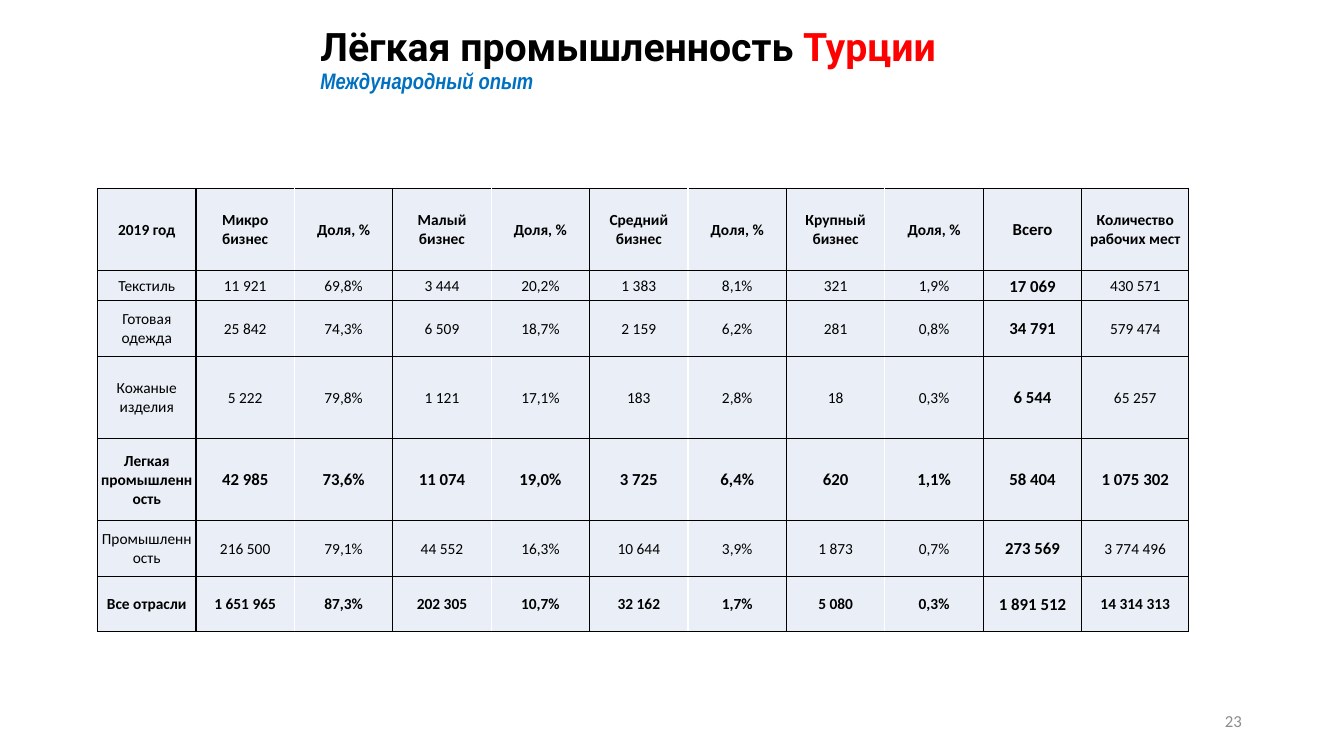
"""Build a slide with a table on the light industry of Turkey."""
from copy import deepcopy

from lxml.etree import SubElement
from pptx import Presentation
from pptx.dml.color import RGBColor
from pptx.enum.text import MSO_ANCHOR as Anchor, MSO_AUTO_SIZE as AutoSize, PP_ALIGN as Align
from pptx.oxml.ns import qn
from pptx.util import Cm, Pt

BLACK = RGBColor(0x00, 0x00, 0x00)
WHITE = RGBColor(0xFF, 0xFF, 0xFF)
RED = RGBColor(0xFF, 0x00, 0x00)
BLUE = RGBColor(0x00, 0x70, 0xC0)
GRAY = RGBColor(0x8C, 0x8C, 0x8C)
PALE = RGBColor(0xEA, 0xEF, 0xF7)

TITLE = "Лёгкая промышленность "
COUNTRY = "Турции"
SUBTITLE = "Международный опыт"
PAGE_NUMBER = "23"
ROWS = [
    ["2019 год", "Микро\nбизнес", "Доля, %", "Малый бизнес", "Доля, %", "Средний бизнес",
     "Доля, %", "Крупный бизнес", "Доля, %", "Всего", "Количество рабочих мест"],
    ["Текстиль", "11 921", "69,8%", "3 444", "20,2%", "1 383", "8,1%", "321", "1,9%",
     "17 069", "430 571"],
    ["Готовая одежда", "25 842", "74,3%", "6 509", "18,7%", "2 159", "6,2%", "281", "0,8%",
     "34 791", "579 474"],
    ["Кожаные изделия", "5 222", "79,8%", "1 121", "17,1%", "183", "2,8%", "18", "0,3%",
     "6 544", "65 257"],
    ["Легкая промышленность", "42 985", "73,6%", "11 074", "19,0%", "3 725", "6,4%", "620",
     "1,1%", "58 404", "1 075 302"],
    ["Промышленность", "216 500", "79,1%", "44 552", "16,3%", "10 644", "3,9%", "1 873",
     "0,7%", "273 569", "3 774 496"],
    ["Все отрасли", "1 651 965", "87,3%", "202 305", "10,7%", "32 162", "1,7%", "5 080",
     "0,3%", "1 891 512", "14 314 313"],
]
ROW_HEIGHTS = [2.07, 0.76, 1.4, 2.07, 2.07, 1.4, 1.4]
COLUMN_WIDTHS = [2.48] * 10 + [2.7]
BOLD_ROWS = {0, 4, 6}
LARGE_ROW = 4
TOTAL_COLUMN = 9
COUNT_COLUMNS = {1, 3, 5, 7}
SHARE_COLUMNS = {2, 4, 6, 8}


def add_span(para, text, *, size, font="Calibri", color=BLACK, bold=False, italic=False):
    span = para.add_run()
    span.text = text
    span.font.size = Pt(size)
    span.font.name = font
    span.font.color.rgb = color
    span.font.bold = bold
    span.font.italic = italic
    return span


def set_borders(cell, column):
    sides = {
        "a:lnL": WHITE if column in SHARE_COLUMNS else BLACK,
        "a:lnR": WHITE if column in COUNT_COLUMNS else BLACK,
        "a:lnT": BLACK,
        "a:lnB": BLACK,
    }
    properties = cell._tc.get_or_add_tcPr()
    for side, color in sides.items():
        line = SubElement(properties, qn(side), w=str(Pt(1)))
        fill = SubElement(line, qn("a:solidFill"))
        SubElement(fill, qn("a:srgbClr"), val=str(color))


def fill_cell(cell, text, row, column):
    large = column == TOTAL_COLUMN or (row == LARGE_ROW and column > 0)
    bold = row in BOLD_ROWS or column == TOTAL_COLUMN
    cell.margin_left = cell.margin_right = cell.margin_top = Cm(0.03)
    cell.margin_bottom = 0
    cell.vertical_anchor = Anchor.MIDDLE
    for index, line in enumerate(text.split("\n")):
        frame = cell.text_frame
        para = frame.add_paragraph() if index else frame.paragraphs[0]
        para.alignment = Align.CENTER
        add_span(para, line, size=12 if large else 11, bold=bold)
    set_borders(cell, column)
    cell.fill.solid()
    cell.fill.fore_color.rgb = PALE


def add_title(page):
    title = page.shapes.title
    title.left, title.top, title.width, title.height = Cm(7.82), Cm(0.69), Cm(21.54), Cm(1.68)
    frame = title.text_frame
    frame.auto_size = AutoSize.NONE
    frame.word_wrap = True
    frame.vertical_anchor = Anchor.MIDDLE
    para = frame.paragraphs[0]
    para.alignment = Align.LEFT
    para.line_spacing = 0.9
    add_span(para, TITLE, size=28, font="Roboto", bold=True)
    country = add_span(para, COUNTRY, size=28, font="Roboto", color=RED, bold=True)
    para.add_line_break()
    para._p[-1].append(deepcopy(country.font._element))
    add_span(para, SUBTITLE, size=16, font="Arial Narrow", color=BLUE, bold=True, italic=True)


def add_industry_table(page):
    frame = page.shapes.add_table(len(ROWS), len(COLUMN_WIDTHS), Cm(2.46), Cm(4.75),
                                  Cm(sum(COLUMN_WIDTHS)), Cm(sum(ROW_HEIGHTS)))
    table = frame.table
    table.first_row = table.horz_banding = False
    for column, width in zip(table.columns, COLUMN_WIDTHS):
        column.width = Cm(width)
    for row, height in zip(table.rows, ROW_HEIGHTS):
        row.height = Cm(height)
    for row, texts in enumerate(ROWS):
        for column, text in enumerate(texts):
            fill_cell(table.cell(row, column), text, row, column)


def add_page_number(page):
    box = page.shapes.add_textbox(Cm(23.93), Cm(17.65), Cm(7.62), Cm(1.02))
    frame = box.text_frame
    frame.word_wrap = True
    frame.vertical_anchor = Anchor.MIDDLE
    para = frame.paragraphs[0]
    para.alignment = Align.RIGHT
    add_span(para, PAGE_NUMBER, size=12, color=GRAY)


def main():
    deck = Presentation()
    deck.slide_width, deck.slide_height = Cm(33.87), Cm(19.05)
    page = deck.slides.add_slide(deck.slide_layouts[5])
    add_title(page)
    add_industry_table(page)
    add_page_number(page)
    deck.save("out.pptx")


if __name__ == "__main__":
    main()
